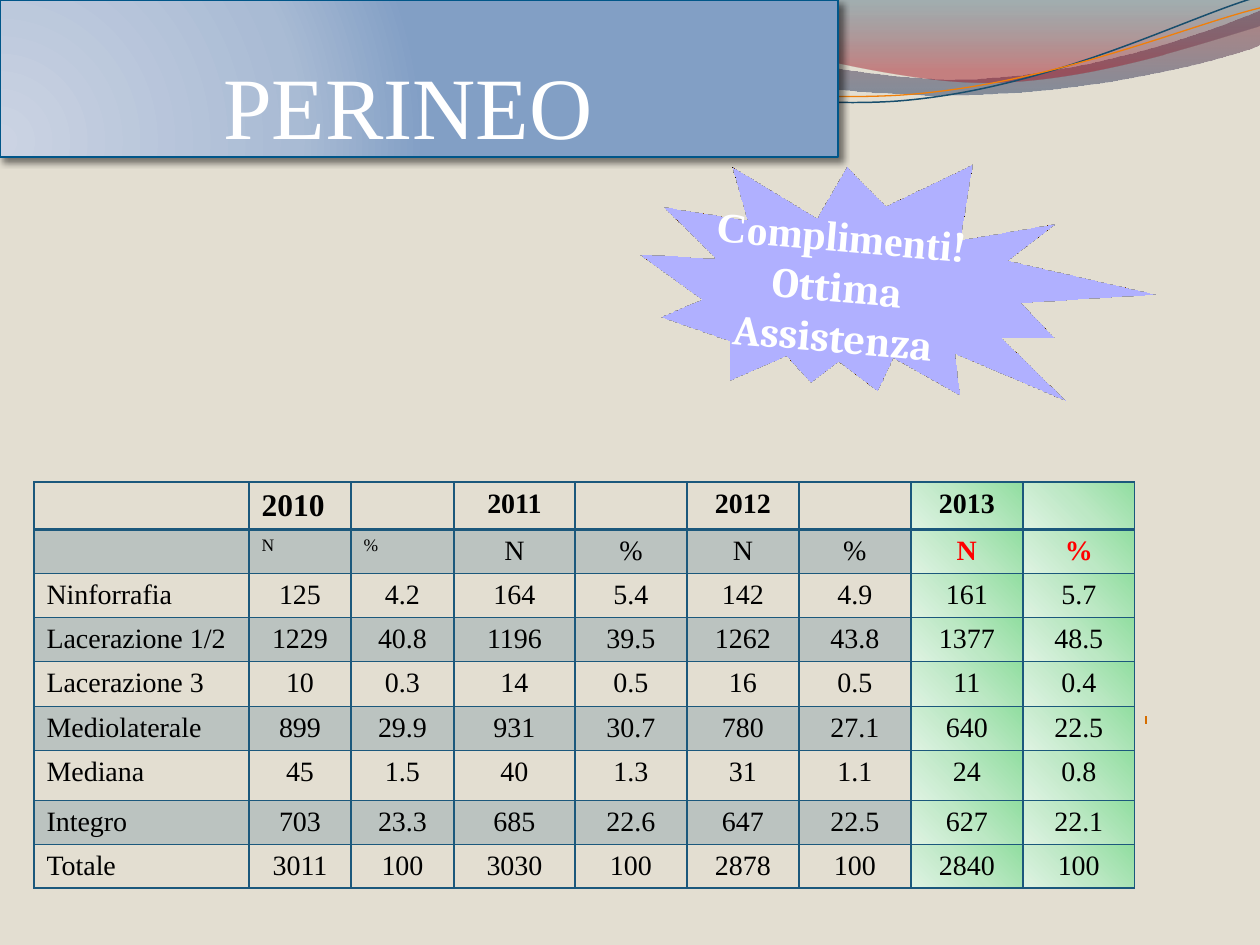
from lxml import etree
from pptx import Presentation
from pptx.dml.color import RGBColor
from pptx.enum.shapes import MSO_SHAPE
from pptx.enum.text import MSO_ANCHOR, PP_ALIGN
from pptx.oxml import parse_xml
from pptx.oxml.ns import qn
from pptx.util import Pt

CENTER, LEFT = PP_ALIGN.CENTER, PP_ALIGN.LEFT
BOTTOM, MIDDLE = MSO_ANCHOR.BOTTOM, MSO_ANCHOR.MIDDLE
STAR, ARC = MSO_SHAPE.EXPLOSION2, MSO_SHAPE.ARC
NS = 'xmlns:a="http://schemas.openxmlformats.org/drawingml/2006/main"'
SCALE = 9144000 / 1260
SERIF, ACCENT_FONT = "Times New Roman", "Cambria"
COLORS = {
    "paper": "E3DED1", "white": "FFFFFF", "black": "000000", "red": "FF0000",
    "border": "1B587C", "star": "9999FF", "star_line": "B25E07", "arc": "D56D00",
    "wave_blue": "184E6D", "wave_orange": "F07F09", "title_line": "005689",
}
TITLE_STOPS = [(0, "CBD3E3", 100), (70, "A9BBD4", 100), (100, "829FC5", 100)]
GREEN_STOPS = [(0, "91DEA0", 100), (50, "BDE8C5", 100), (100, "DFF3E3", 100)]
BACK_STOPS = [(0, "7E1621", 45), (100, "005689", 55)]
FRONT_STOPS = [(0, "094467", 30), (80, "A10F1F", 45), (100, "A10F1F", 45)]
LINEAR = '<a:lin ang="5400000" scaled="0"/>'
FROM_LEFT = ('<a:path path="circle"><a:fillToRect l="0" t="90000" r="100000" b="10000"/>'
             '</a:path>')
FROM_TOP_RIGHT = '<a:path path="circle"><a:fillToRect l="100000" b="100000"/></a:path>'

ROWS = [
    ["", "2010", "", "2011", "", "2012", "", "2013", ""],
    ["", "N", "%", "N", "%", "N", "%", "N", "%"],
    ["Ninforrafia", "125", "4.2", "164", "5.4", "142", "4.9", "161", "5.7"],
    ["Lacerazione 1/2", "1229", "40.8", "1196", "39.5", "1262", "43.8", "1377", "48.5"],
    ["Lacerazione 3", "10", "0.3", "14", "0.5", "16", "0.5", "11", "0.4"],
    ["Mediolaterale", "899", "29.9", "931", "30.7", "780", "27.1", "640", "22.5"],
    ["Mediana", "45", "1.5", "40", "1.3", "31", "1.1", "24", "0.8"],
    ["Integro", "703", "23.3", "685", "22.6", "647", "22.5", "627", "22.1"],
    ["Totale", "3011", "100", "3030", "100", "2878", "100", "2840", "100"],
]
COL_WIDTHS = [215, 102, 103, 121] + [112] * 5
ROW_HEIGHTS = [47, 44, 44, 44, 45, 44, 50, 44, 43]


def px(n):
    return round(n * SCALE)


def rgb(name):
    return RGBColor.from_string(COLORS[name])


def add_text(p, text, size=16, color="black", bold=False, font=SERIF, align=CENTER):
    p.alignment = align
    r = p.add_run()
    r.text = text
    r.font.size, r.font.bold, r.font.name = Pt(size), bold, font
    r.font.color.rgb = rgb(color)


def gradient(stops, direction):
    gs = "".join(
        f'<a:gs pos="{pos * 1000}"><a:srgbClr val="{c}"><a:alpha val="{a * 1000}"/></a:srgbClr></a:gs>'
        for pos, c, a in stops)
    return parse_xml(f'<a:gradFill {NS} rotWithShape="1"><a:gsLst>{gs}</a:gsLst>{direction}</a:gradFill>')


def set_gradient(shape, stops, direction):
    shape.fill.solid()
    old = shape.fill._xPr.find(qn("a:solidFill"))
    old.getparent().replace(old, gradient(stops, direction))


def set_line(shape, color, width):
    shape.line.color.rgb = rgb(color)
    shape.line.width = Pt(width)


def add_curves(s, points, straight=(), closed=False):
    fb = s.shapes.build_freeform(*points[0], scale=SCALE)
    fb.add_line_segments(points[1:], close=closed)
    sp = fb.convert_to_shape()
    sp.shadow.inherit = False
    segments = list(sp._element.iter(qn("a:lnTo")))
    i = 0
    while i < len(points) - 1:
        if i + 1 in straight:
            i += 1
            continue
        curve = etree.Element(qn("a:cubicBezTo"))
        segments[i].addprevious(curve)
        for segment in segments[i:i + 3]:
            curve.append(segment[0])
            segment.getparent().remove(segment)
        i += 3
    return sp


def add_waves(s):
    back = add_curves(s, [
        (0, -1), (554, -1), (600, 23), (837, 79), (955, 79), (1075, 79), (1207, 33), (1260, 11),
        (1261, 45), (1239, 55), (1096, 96), (940, 95), (784, 95), (481, 35), (324, 43),
        (163, 44), (58, 105), (-1, 142)], straight=(1, 8), closed=True)
    front = add_curves(s, [
        (604, -1), (641, 14), (859, 78), (969, 82), (1079, 87), (1211, 40), (1260, 26),
        (1260, 0)], straight=(7,), closed=True)
    for sp, stops in ((back, BACK_STOPS), (front, FRONT_STOPS)):
        set_gradient(sp, stops, LINEAR)
        sp.line.fill.background()
    threads = [
        ("wave_blue", 0.85, [(0, 140), (60, 117), (199, 72), (349, 66), (498, 59), (747, 112),
                             (898, 101), (1050, 89), (1182, 19), (1257, -3)]),
        ("wave_orange", 0.75, [(0, 131), (59, 121), (207, 77), (357, 71), (508, 64), (752, 105),
                               (903, 95), (1053, 84), (1186, 26), (1260, 8)]),
    ]
    for color, width, points in threads:
        sp = add_curves(s, points)
        sp.fill.background()
        set_line(sp, color, width)


def add_title(s, x, y, w, h):
    sp = s.shapes.title
    sp.left, sp.top, sp.width, sp.height = px(x), px(y), px(w), px(h)
    set_gradient(sp, TITLE_STOPS, FROM_LEFT)
    set_line(sp, "title_line", 1)
    sp._element.spPr.append(parse_xml(
        f'<a:effectLst {NS}><a:outerShdw blurRad="50800" dist="38100" dir="2700000">'
        '<a:srgbClr val="000000"><a:alpha val="50000"/></a:srgbClr></a:outerShdw></a:effectLst>'))
    tf = sp.text_frame
    tf.vertical_anchor = BOTTOM
    tf.margin_left = tf.margin_right = tf.margin_bottom = 0
    add_text(tf.paragraphs[0], "PERINEO ", size=50, color="white")
    s.shapes._spTree.append(sp._element)


def format_cell(cell, row, col):
    tcPr = cell._tc.get_or_add_tcPr()
    for side in "LRTB":
        thick = row == 0 and side == "B"
        tcPr.append(parse_xml(
            f'<a:ln{side} {NS} w="{25400 if thick else 12700}"><a:solidFill>'
            f'<a:srgbClr val="{COLORS["border"]}"/></a:solidFill></a:ln{side}>'))
    if col >= 7:
        tcPr.append(gradient(GREEN_STOPS, FROM_TOP_RIGHT))
    elif row % 2:
        cell.fill.solid()
        cell.fill.fore_color.rgb = rgb("border")
        color = tcPr.find(qn("a:solidFill"))[0]
        etree.SubElement(color, qn("a:alpha"), val="20000")
    else:
        cell.fill.background()


def add_results(s, x, y):
    frame = s.shapes.add_table(len(ROWS), len(COL_WIDTHS), px(x), px(y),
                               px(sum(COL_WIDTHS)), px(sum(ROW_HEIGHTS)))
    table = frame.table
    for column, w in zip(table.columns, COL_WIDTHS):
        column.width = px(w)
    for row, h in zip(table.rows, ROW_HEIGHTS):
        row.height = px(h)
    table.first_row = table.horz_banding = False
    for i, values in enumerate(ROWS):
        for j, value in enumerate(values):
            cell = table.cell(i, j)
            format_cell(cell, i, j)
            p = cell.text_frame.paragraphs[0]
            if not value:
                end = etree.SubElement(p._p, qn("a:endParaRPr"), sz="1400")
                etree.SubElement(end, qn("a:latin"), typeface=SERIF)
                continue
            small = i == 1 and j in (1, 2)
            first_year = i == 0 and j == 1
            accent = i == 1 and j >= 7
            add_text(p, value, size=10 if small else 18 if first_year else 16,
                     color="red" if accent else "black", bold=i == 0 or accent,
                     align=LEFT if j == 0 or small or first_year else CENTER)


def add_star(s, x, y, w, h):
    sp = s.shapes.add_shape(STAR, px(x), px(y), px(w), px(h))
    sp.shadow.inherit = False
    sp.fill.solid()
    sp.fill.fore_color.rgb = rgb("star")
    set_line(sp, "star_line", 2)
    sp._element.spPr.append(parse_xml(
        f'<a:scene3d {NS}><a:camera prst="perspectiveContrastingLeftFacing"/>'
        '<a:lightRig rig="threePt" dir="t"/></a:scene3d>'))
    tf = sp.text_frame
    tf.word_wrap, tf.vertical_anchor = True, MIDDLE
    p = tf.paragraphs[0]
    add_text(p, "Complimenti", size=24, color="white", bold=True)
    add_text(p, "!", size=24, color="white", bold=True, font=ACCENT_FONT)
    add_text(tf.add_paragraph(), "Ottima Assistenza", size=24, color="white", bold=True,
             font=ACCENT_FONT)


def add_arc(s, x, y, w, h):
    sp = s.shapes.add_shape(ARC, px(x), px(y), px(w), px(h))
    sp.shadow.inherit = False
    sp.adjustments[0], sp.adjustments[1] = 162, 162.97
    sp.fill.background()
    set_line(sp, "arc", 4.5)


def main():
    prs = Presentation()
    prs.slide_width, prs.slide_height = px(1260), px(945)
    s = prs.slides.add_slide(prs.slide_layouts[5])
    s.background.fill.solid()
    s.background.fill.fore_color.rgb = rgb("paper")
    add_waves(s)
    add_title(s, 0, 0, 838, 157)
    add_results(s, 34, 482)
    add_star(s, 511, 145, 705, 277)
    add_arc(s, 1066, 720, 159, 126)
    prs.save("out.pptx")


if __name__ == "__main__":
    main()
